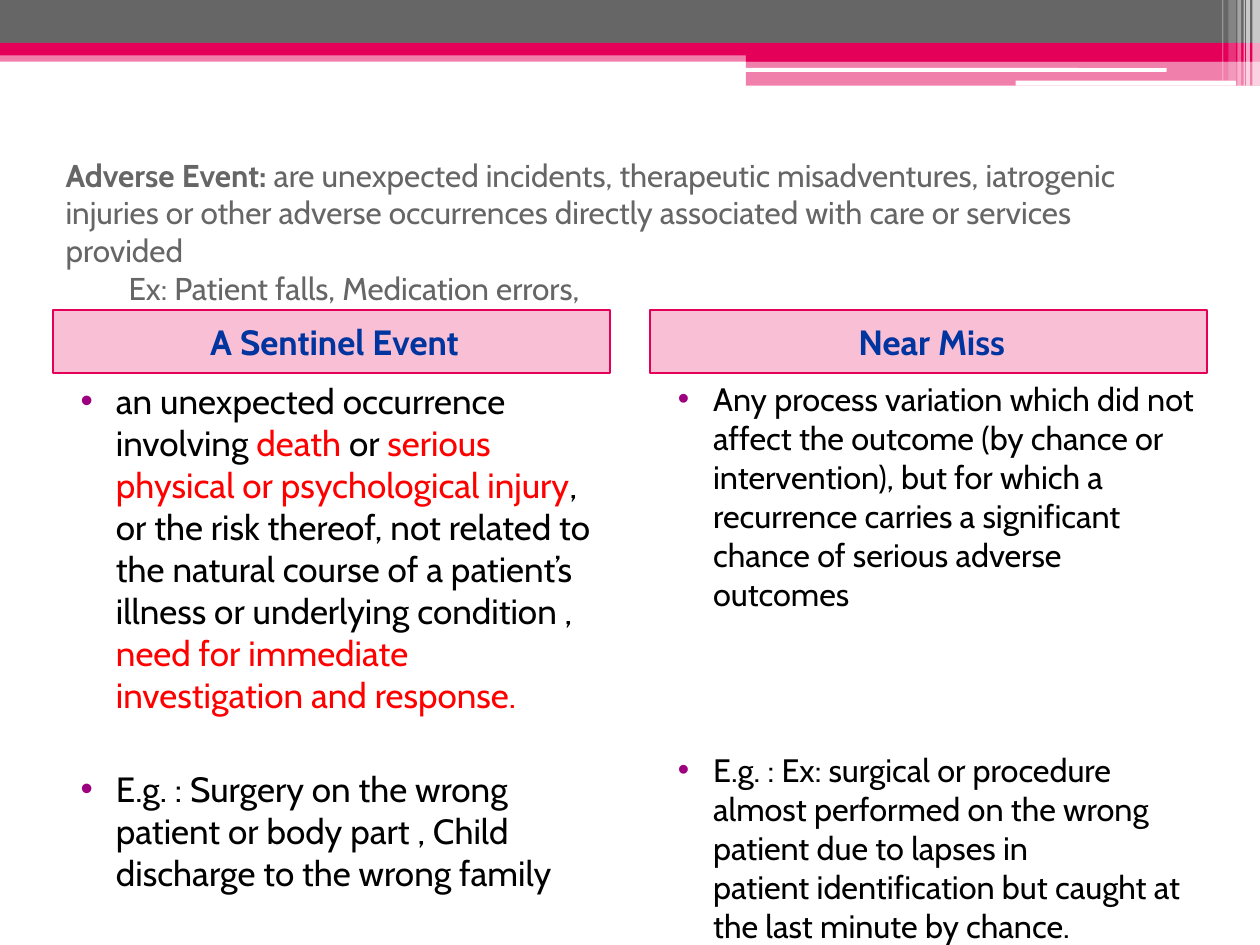
from dataclasses import dataclass

from lxml import etree
from pptx import Presentation
from pptx.dml.color import RGBColor
from pptx.enum import shapes, text
from pptx.oxml import ns
from pptx.util import Inches, Pt


@dataclass(frozen=True)
class Theme:
    font: str = "Cabin"
    gray: str = "666666"
    pink: str = "E40059"
    white: str = "FFFFFF"
    blue: str = "00349E"
    black: str = "000000"
    red: str = "FF0000"
    plum: str = "9C007F"
    small: float = 18
    mid: float = 18.5
    large: float = 20


T = Theme()
RECT = shapes.MSO_SHAPE.RECTANGLE
ROUND = shapes.MSO_SHAPE.ROUNDED_RECTANGLE
LEFT, CENTER = text.PP_ALIGN.LEFT, text.PP_ALIGN.CENTER
TOP, MIDDLE = text.MSO_ANCHOR.TOP, text.MSO_ANCHOR.MIDDLE

# left, top, width, height, colour, opacity in percent
BANDS = [
    (0, 0.4, 10, 0.09, T.pink, 50),
    (0, 0, 10, 0.34, T.gray, 100),
    (0, 0.34, 10, 0.1, T.pink, 100),
    (5.92, 0.39, 4.08, 0.1, T.pink, 100),
    (5.92, 0.48, 4.08, 0.2, T.pink, 50),
]
PILLS = [(5.91, 0.54, 3.35, 0.03), (8.06, 0.64, 1.75, 0.04)]
# left, width, height, opacity in percent
STRIPES = [
    (9.94, 0.06, 0.68, 65),
    (9.89, 0.03, 0.68, 65),
    (9.87, 0.01, 0.68, 60),
    (9.82, 0.03, 0.68, 40),
    (9.75, 0.06, 0.64, 20),
    (9.7, 0.01, 0.64, 30),
]
COLS = (0.42, 5.16)
WIDE = 4.42


def paint(shape, color, alpha=100):
    shape.fill.solid()
    shape.fill.fore_color.rgb = RGBColor.from_string(color)
    if alpha < 100:
        tone = shape.fill._xPr.find(".//" + ns.qn("a:srgbClr"))
        etree.SubElement(tone, ns.qn("a:alpha"), val=str(alpha * 1000))


def band(slide, box, color, alpha=100, kind=RECT):
    shape = slide.shapes.add_shape(kind, *map(Inches, box))
    shape.shadow.inherit = False
    shape.line.fill.background()
    paint(shape, color, alpha)


def place(shape, box, anchor=TOP):
    """Move a placeholder and return its text frame."""
    shape.left, shape.top, shape.width, shape.height = map(Inches, box)
    frame = shape.text_frame
    frame.word_wrap = True
    frame.auto_size = text.MSO_AUTO_SIZE.NONE
    frame.vertical_anchor = anchor
    return frame


def write(para, words, size=T.large, color=T.black, bold=False):
    """Add a run; each newline in words becomes a line break."""
    for i, line in enumerate(words.split("\n")):
        if i:
            para.add_line_break()
        run = para.add_run()
        run.text = line
        run.font.name = T.font
        run.font.size = Pt(size)
        run.font.bold = bold
        run.font.color.rgb = RGBColor.from_string(color)


def layout(para, align=LEFT, before=0, margin=0, indent=0, bullet=False):
    para.alignment = align
    para.space_before = Pt(before)
    props = para._p.get_or_add_pPr()
    props.set("marL", str(Inches(margin)))
    props.set("indent", str(Inches(indent)))
    if bullet:
        tint = etree.SubElement(props, ns.qn("a:buClr"))
        etree.SubElement(tint, ns.qn("a:srgbClr"), val=T.plum)
        etree.SubElement(props, ns.qn("a:buFont"), typeface="Arial")
        etree.SubElement(props, ns.qn("a:buChar"), char="•")


def header(shape, left, words):
    frame = place(shape, (left, 2.46, WIDE, 0.5), MIDDLE)
    paint(shape, T.pink, 25)
    shape.line.color.rgb = RGBColor.from_string(T.pink)
    shape.line.width = Pt(1)
    para = frame.paragraphs[0]
    layout(para, CENTER, before=3, margin=0.05)
    write(para, words, color=T.blue, bold=True)


def points(shape, left, items, size, gap):
    """Fill a bullet list; each item is a list of (words, colour) runs."""
    frame = place(shape, (left, 2.96, WIDE, 4.25))
    for i, runs in enumerate(items):
        para = frame.add_paragraph() if i else frame.paragraphs[0]
        layout(para, before=gap if i else 3, margin=0.4, indent=-0.28, bullet=True)
        for words, color in runs:
            write(para, words, size=size, color=color)


def title(shape):
    para = place(shape, (0.42, 1.25, 9.17, 1.17), MIDDLE).paragraphs[0]
    layout(para)
    write(para, "Adverse Event: ", size=T.small, color=T.gray, bold=True)
    write(para, "are unexpected incidents, therapeutic misadventures, iatrogenic "
          "injuries or other adverse occurrences directly associated with care "
          "or services provided \n\tEx: Patient falls, Medication errors,",
          size=T.small, color=T.gray)


def main():
    deck = Presentation()
    deck.slide_width, deck.slide_height = Inches(10), Inches(7.5)
    slide = deck.slides.add_slide(deck.slide_layouts[4])

    for *box, color, alpha in BANDS:
        band(slide, box, color, alpha)
    for box in PILLS:
        band(slide, box, T.white, kind=ROUND)
    for left, width, height, alpha in STRIPES:
        band(slide, (left, 0, width, height), T.white, alpha)

    name, head1, body1, head2, body2 = slide.placeholders
    title(name)
    header(head1, COLS[0], "A Sentinel Event")
    header(head2, COLS[1], "Near Miss")
    points(body1, COLS[0], [
        [("an unexpected occurrence involving ", T.black),
         ("death ", T.red),
         ("or ", T.black),
         ("serious physical or psychological injury", T.red),
         (", or the risk thereof, not related to the natural course of a "
          "patient’s illness or underlying condition ,", T.black),
         (" need for immediate investigation and response.", T.red)],
        [("E.g. : Surgery on the wrong patient or body part , Child discharge "
          "to the wrong family", T.black)],
    ], size=T.large, gap=30)
    points(body2, COLS[1], [
        [("Any process variation which did not affect the outcome (by chance or "
          "intervention), but for which a recurrence carries a significant "
          "chance of serious adverse outcomes", T.black)],
        [("E.g. : Ex: surgical or procedure almost performed on the wrong "
          "patient due to lapses in\npatient identification but caught at the "
          "last minute by chance.", T.black)],
    ], size=T.mid, gap=78.6)
    deck.save("out.pptx")


if __name__ == "__main__":
    main()
